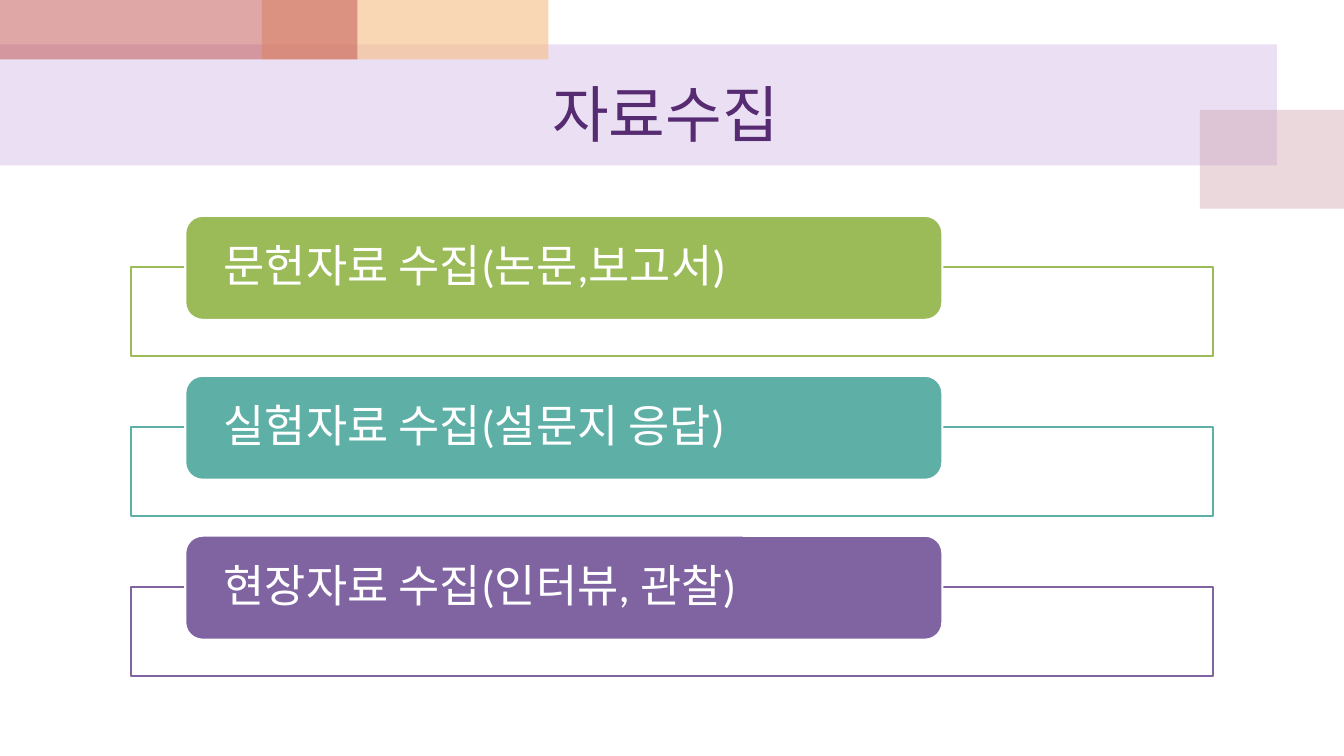
import pptx
import pptx.dml.color
import pptx.enum.shapes
import pptx.enum.text
import pptx.oxml.ns
import pptx.util
from lxml import etree

Cm, Pt = pptx.util.Cm, pptx.util.Pt
SHAPE = pptx.enum.shapes.MSO_SHAPE
ALIGN = pptx.enum.text.PP_ALIGN


def add_box(s, kind, at, fill, opacity=100, line=None):
    """Add a preset shape; at is left, top, width, height in cm, opacity in percent."""
    sp = s.shapes.add_shape(kind, *[Cm(v) for v in at])
    sp.shadow.inherit = False
    sp.fill.solid()
    sp.fill.fore_color.rgb = pptx.dml.color.RGBColor.from_string(fill)
    if opacity < 100:
        color = sp.fill._xPr.find(".//" + pptx.oxml.ns.qn("a:srgbClr"))
        etree.SubElement(color, pptx.oxml.ns.qn("a:alpha"), val=str(opacity * 1000))
    if line:
        sp.line.color.rgb = pptx.dml.color.RGBColor.from_string(line)
        sp.line.width = Pt(1.5)
    else:
        sp.line.fill.background()
    return sp


def write(sp, text, size, color, align, inset, spacing):
    tf = sp.text_frame
    frame_format = {
        "word_wrap": True,
        "vertical_anchor": pptx.enum.text.MSO_ANCHOR.MIDDLE,
        "margin_left": Cm(inset),
        "margin_right": Cm(inset),
        "margin_top": Cm(0.13),
        "margin_bottom": Cm(0.13),
    }
    for name, value in frame_format.items():
        setattr(tf, name, value)
    p = tf.paragraphs[0]
    p.alignment = align
    p.line_spacing = spacing
    r = p.add_run()
    r.text = text
    r.font.name = "Calibri"
    r.font.size = Pt(size)
    r.font.color.rgb = pptx.dml.color.RGBColor.from_string(color)


prs = pptx.Presentation()
prs.slide_width, prs.slide_height = Cm(33.87), Cm(19.05)
s = prs.slides.add_slide(prs.slide_layouts[6])

# Translucent header blocks, back to front
header_blocks = [
    ((0, 1.12, 32.18, 3.05), "BF98D8", 30),
    ((30.24, 2.77, 3.63, 2.49), "CC9EAC", 40),
    ((6.6, 0, 7.22, 1.5), "F5BC83", 60),
    ((0, 0, 9.01, 1.5), "C0504D", 50),
]
for at, fill, opacity in header_blocks:
    add_box(s, SHAPE.RECTANGLE, at, fill, opacity)

# One framed label per kind of data
methods = [
    ("문헌자료 수집(논문,보고서)", "9BBB59"),
    ("실험자료 수집(설문지 응답)", "5EAFA6"),
    ("현장자료 수집(인터뷰, 관찰)", "8064A2"),
]
for i, (text, color) in enumerate(methods):
    top = 5.44 + 4.03 * i
    add_box(s, SHAPE.RECTANGLE, (3.3, top + 1.3, 27.26, 2.24), "FFFFFF", 90, color)
    label = add_box(s, SHAPE.ROUNDED_RECTANGLE, (4.67, top, 19.08, 2.62), color, line="FFFFFF")
    write(label, text, 32, "FFFFFF", ALIGN.LEFT, 0.84, 0.9)

title = s.shapes.add_textbox(Cm(2.34), Cm(1.7), Cm(29.21), Cm(2.31))
write(title, "자료수집 ", 44, "562B71", ALIGN.CENTER, 0.25, 1.0)

prs.save("out.pptx")
